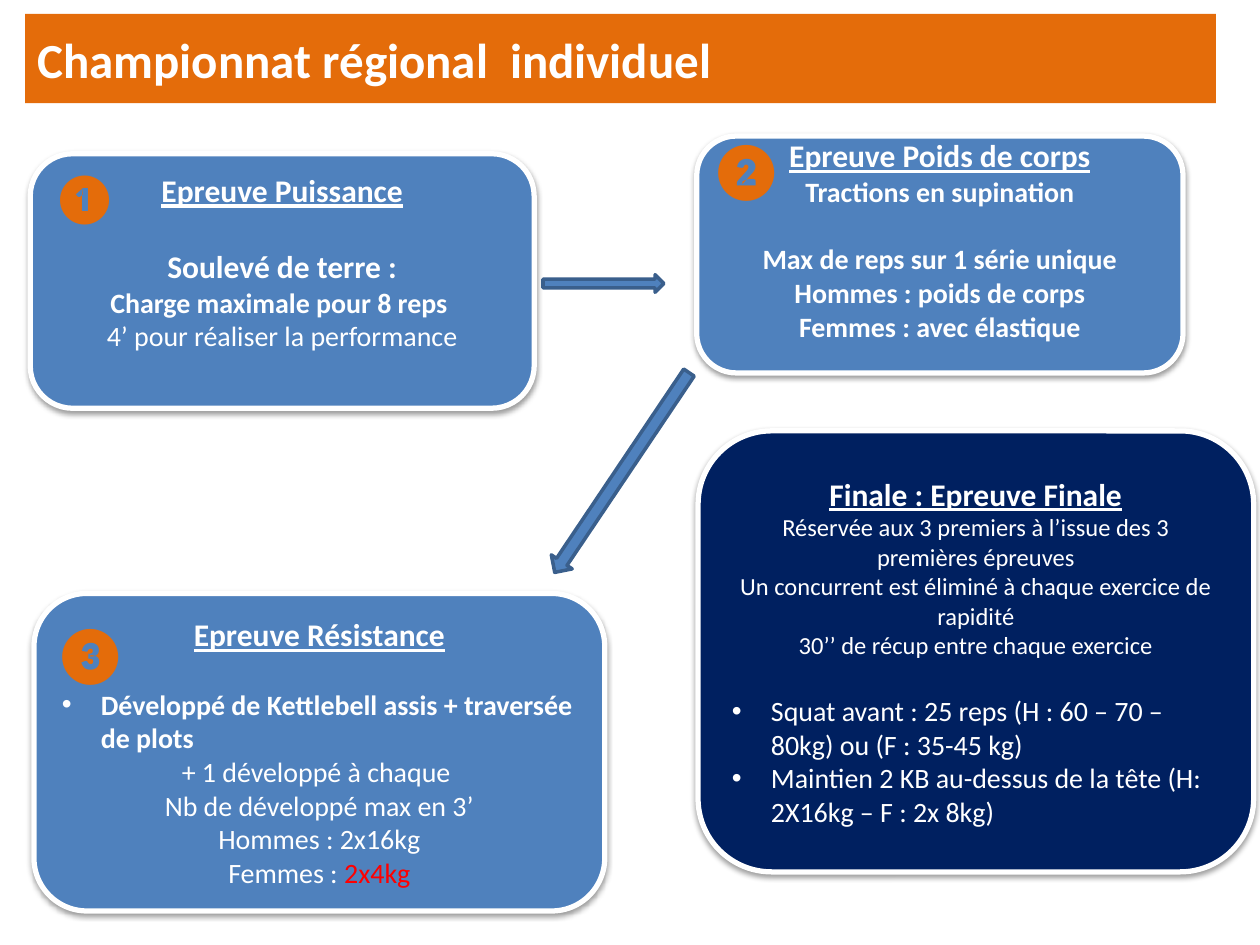
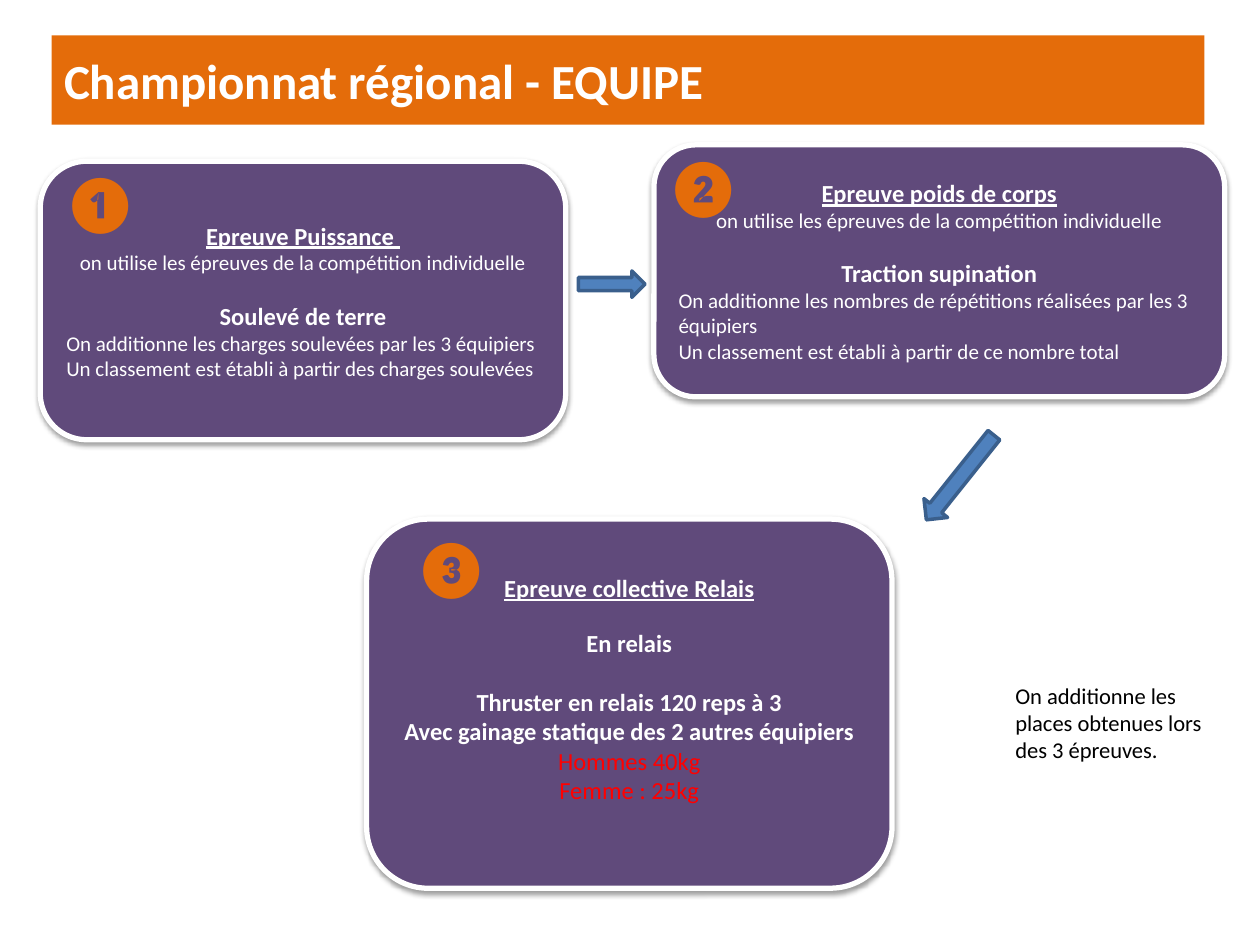
"""Build two slides on the regional championship: individual and team events."""
from dataclasses import dataclass

from lxml.etree import SubElement
from pptx import Presentation
from pptx.dml.color import RGBColor as Rgb
from pptx.enum.shapes import MSO_SHAPE as Shape
from pptx.enum.text import MSO_ANCHOR as Anchor, MSO_AUTO_SIZE as AutoSize, PP_ALIGN as Align
from pptx.oxml.ns import qn
from pptx.util import Inches, Pt


@dataclass(frozen=True)
class Theme:
    font: str = "Calibri"
    white: str = "FFFFFF"
    black: str = "000000"
    orange: str = "E46C0A"
    blue: str = "4F81BD"
    arrow_edge: str = "3A5F8C"
    navy: str = "002060"
    purple: str = "604A7B"
    red: str = "FF0000"
    title: int = 28
    heading: int = 18
    body: int = 16
    team_heading: int = 14
    team_body: int = 12
    badge: int = 32
    note: float = 12.9
    line_height: float = 1.22


theme = Theme()
deck = Presentation()
deck.slide_width, deck.slide_height = Inches(10), Inches(7.5)
COLUMN, ROW = deck.slide_width / 100, deck.slide_height / 75
INDENT = Inches(0.31)


def place(slide, kind, cells, fill, edge=None, weight=0):
    left, top, width, height = cells
    block = slide.shapes.add_shape(kind, int(left * COLUMN), int(top * ROW),
                                   int(width * COLUMN), int(height * ROW))
    block.shadow.inherit = False
    block.fill.solid()
    block.fill.fore_color.rgb = Rgb.from_string(fill)
    if edge:
        block.line.color.rgb = Rgb.from_string(edge)
        block.line.width = Pt(weight)
    else:
        block.line.fill.background()
    return block


def write(frame, lines, colour):
    """Style flags: b bold, u underlined, l left, * bullet; text after | is red."""
    frame.word_wrap = True
    for index, (text, size, style, skipped) in enumerate(lines):
        paragraph = frame.add_paragraph() if index else frame.paragraphs[0]
        plain, _, marked = text.partition("|")
        paragraph.alignment = Align.LEFT if set("l*") & set(style) else Align.CENTER
        if skipped:
            paragraph.space_before = Pt(round(skipped * theme.line_height, 1))
        if "*" in style:
            properties = paragraph._p.get_or_add_pPr()
            properties.set("marL", str(INDENT))
            properties.set("indent", str(-INDENT))
            SubElement(properties, qn("a:buFont")).set("typeface", "Arial")
            SubElement(properties, qn("a:buChar")).set("char", "•")
        for words, tint in ((plain, colour), (marked, theme.red)):
            if words:
                run = paragraph.add_run()
                run.text = words
                run.font.name, run.font.size = theme.font, Pt(size)
                run.font.bold, run.font.underline = "b" in style, "u" in style
                run.font.color.rgb = Rgb.from_string(tint)


head, body = theme.heading, theme.body
team_head, team_body = theme.team_heading, theme.team_body
shared_rule = ("on utilise les épreuves de la compétition individuelle", team_body, "", 0)

championships = [
    {
        "title": ("Championnat régional  individuel", (2, 1.1, 94.5, 7.1)),
        "events": [
            ((55.3, 10.8, 38.6, 18.8), theme.blue, 14, [
                ("Epreuve Poids de corps", head, "bu", 0),
                ("Tractions en supination", body, "b", 0),
                ("Max de reps sur 1 série unique", body, "b", body),
                ("Hommes : poids de corps", body, "b", 0),
                ("Femmes : avec élastique", body, "b", 0)]),
            ((2.4, 12.2, 40, 20.2), theme.blue, 18, [
                ("Epreuve Puissance", head, "bu", 0),
                ("Soulevé de terre :", head, "b", head),
                ("Charge maximale pour 8 reps ", body, "b", 0),
                ("4’ pour réaliser la performance", body, "", 0)]),
            ((55.4, 34.2, 44.1, 35), theme.navy, 0, [
                ("Finale : Epreuve Finale", head, "bu", 0),
                ("Réservée aux 3 premiers à l’issue des 3 premières épreuves", team_head, "", 0),
                ("Un concurrent est éliminé à chaque exercice de rapidité", team_head, "", 0),
                ("30’’ de récup entre chaque exercice", team_head, "", 0),
                ("Squat avant : 25 reps (H : 60 – 70 – 80kg) ou (F : 35-45 kg)", body, "*", body),
                ("Maintien 2 KB au-dessus de la tête (H: 2X16kg – F : 2x 8kg)", body, "*", 0)]),
            ((2.7, 47.1, 45.3, 25.2), theme.blue, 0, [
                ("Epreuve Résistance", head, "bu", 0),
                ("Développé de Kettlebell assis + traversée de plots", body, "b*", body),
                ("+ 1 développé à chaque ", body, "", 0),
                ("Nb de développé max en 3’", body, "", 0),
                ("Hommes : 2x16kg", body, "", 0),
                ("Femmes : |2x4kg", body, "", 0)]),
        ],
        "arrows": [
            (Shape.RIGHT_ARROW, (39.8, 36.5, 19.1, 2), 123.9),
            (Shape.RIGHT_ARROW, (43.1, 21.8, 9.6, 1.4), 0),
        ],
        "badges": [
            ("❶", (3.2, 12.7, 5.5, 5.7), theme.title),
            ("❷", (55.3, 10.2, 8.2, 6.4), theme.badge),
            ("❸", (3.3, 48.6, 6, 6.4), theme.badge),
        ],
        "notes": [],
    },
    {
        "title": ("Championnat régional - EQUIPE", (4.1, 2.8, 91.5, 7.1)),
        "events": [
            ((29.1, 41.2, 41.7, 29.3), theme.purple, 14, [
                ("Epreuve collective Relais", team_head, "bu", 2),
                ("En relais", team_head, "b", team_body),
                ("Thruster en relais 120 reps à 3", team_head, "b", team_head),
                ("Avec gainage statique des 2 autres équipiers", team_head, "b", 0),
                ("|Hommes 40kg", team_head, "", 0),
                ("|Femme : 25kg", team_head, "", 0)]),
            ((3.2, 12.8, 41.7, 22.1), theme.purple, 0, [
                ("Epreuve Puissance ", team_head, "bu", 0),
                shared_rule,
                ("Soulevé de terre", team_head, "b", team_body),
                ("On additionne les charges soulevées par les 3 équipiers", team_body, "l", 0),
                ("Un classement est établi à partir des charges soulevées", team_body, "l", 0)]),
            ((51.9, 11.5, 45.3, 20), theme.purple, 0, [
                ("Epreuve poids de corps", team_head, "bu", 2),
                shared_rule,
                ("Traction supination", team_head, "b", team_body),
                ("On additionne les nombres de répétitions réalisées par les 3 équipiers",
                 team_body, "l", 0),
                ("Un classement est établi à partir de ce nombre total", team_body, "l", 0)]),
        ],
        "arrows": [
            (Shape.RIGHT_ARROW, (45.9, 21.5, 5.3, 2.1), 0),
            (Shape.DOWN_ARROW, (75, 33.6, 2.4, 8.6), 38.6),
        ],
        "badges": [
            ("❶", (4.1, 12.8, 6, 6.4), theme.badge),
            ("❷", (51.9, 11.5, 8.2, 6.4), theme.badge),
            ("❸", (31.9, 41.8, 6, 6.4), theme.badge),
        ],
        "notes": [
            ("On additionne les places obtenues lors des 3 épreuves.", (79.6, 54, 17.7, 6.7)),
        ],
    },
]

for championship in championships:
    slide = deck.slides.add_slide(deck.slide_layouts[6])

    title, cells = championship["title"]
    band = place(slide, Shape.RECTANGLE, cells, theme.orange)
    band.text_frame.vertical_anchor = Anchor.MIDDLE
    write(band.text_frame, [(title, theme.title, "bl", 0)], theme.white)

    for cells, fill, spare_line, lines in championship["events"]:
        event = place(slide, Shape.ROUNDED_RECTANGLE, cells, fill, theme.white, 3)
        effects = event._element.spPr.find(qn("a:effectLst"))
        shadow = SubElement(effects, qn("a:outerShdw"), blurRad=str(Pt(3.1)), dist=str(Pt(1.6)),
                            dir="5400000", rotWithShape="0")
        shade = SubElement(shadow, qn("a:srgbClr"), val=theme.black)
        SubElement(shade, qn("a:alpha"), val="38000")
        event.text_frame.vertical_anchor = Anchor.MIDDLE
        event.text_frame.margin_bottom = Inches(0.05) + Pt(spare_line * theme.line_height)
        write(event.text_frame, lines, theme.white)

    for kind, cells, angle in championship["arrows"]:
        arrow = place(slide, kind, cells, theme.blue, theme.arrow_edge, 2)
        arrow.rotation = angle

    for number, (left, top, width, height), size in championship["badges"]:
        badge = slide.shapes.add_textbox(int(left * COLUMN), int(top * ROW),
                                         int(width * COLUMN), int(height * ROW))
        write(badge.text_frame, [(number, size, "bl", 0)], theme.orange)
        badge.text_frame.word_wrap = width > 6
        badge.text_frame.auto_size = AutoSize.SHAPE_TO_FIT_TEXT

    for remark, (left, top, width, height) in championship["notes"]:
        note = slide.shapes.add_textbox(int(left * COLUMN), int(top * ROW),
                                        int(width * COLUMN), int(height * ROW))
        note.text_frame.vertical_anchor = Anchor.MIDDLE
        write(note.text_frame, [(remark, theme.note, "l", 0)], theme.black)

deck.save("out.pptx")
